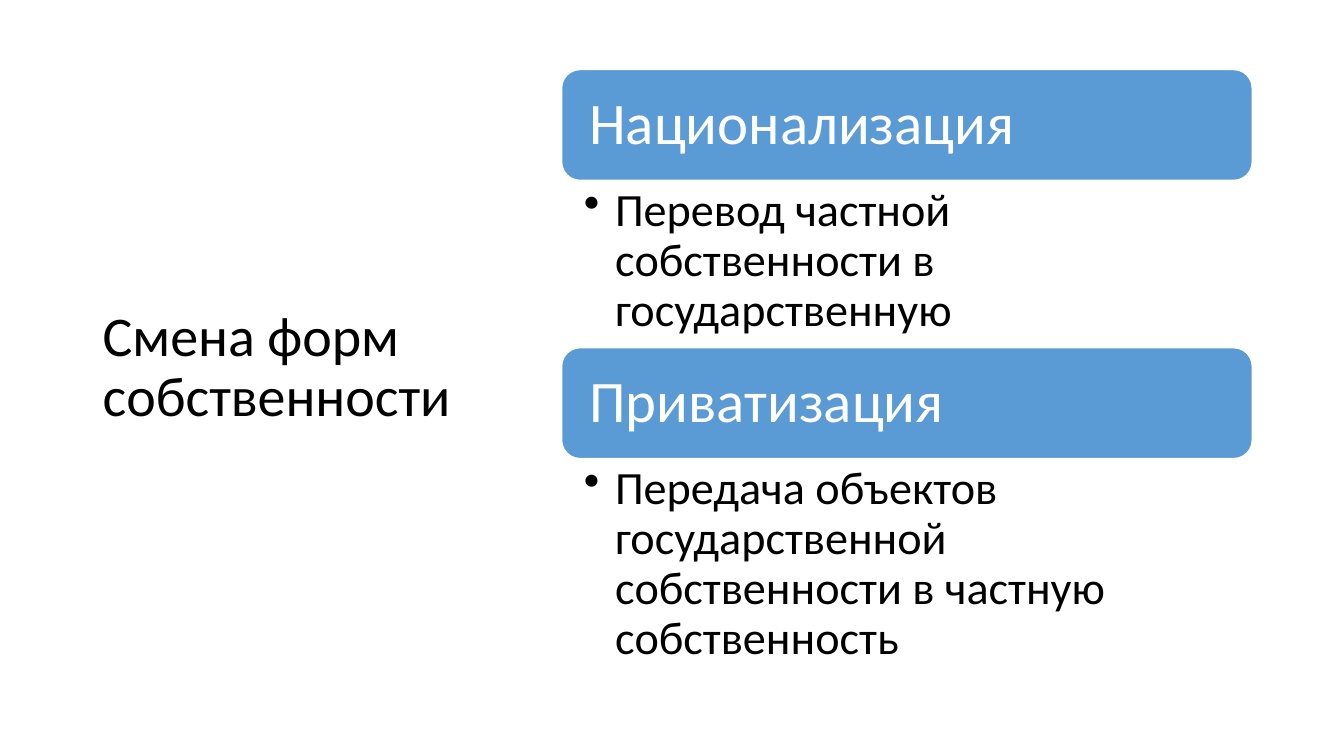
import pptx
import pptx.dml.color
import pptx.enum.shapes
import pptx.enum.text
import pptx.oxml
import pptx.oxml.ns
import pptx.util
from pptx.util import Inches

COLORS = {"bar": "5B9BD5", "light": "FFFFFF", "dark": "000000"}
MIDDLE = pptx.enum.text.MSO_ANCHOR.MIDDLE
TOP = pptx.enum.text.MSO_ANCHOR.TOP

BAR_HEIGHT = 1.1
# Heading, description, height of the description
FORMS = [
    ("Национализация", "Перевод частной собственности в государственную", 1.66),
    ("Приватизация",
     "Передача объектов государственной собственности в частную собственность", 2.14),
]


def color(name):
    return pptx.dml.color.RGBColor.from_string(COLORS[name])


def write(shape, text, size, color_name, anchor, insets):
    """Fill a shape with one left-aligned paragraph and return it."""
    frame = shape.text_frame
    frame.word_wrap = True
    frame.vertical_anchor = anchor
    (frame.margin_left, frame.margin_top,
     frame.margin_right, frame.margin_bottom) = map(Inches, insets)
    para = frame.paragraphs[0]
    para.alignment = pptx.enum.text.PP_ALIGN.LEFT
    para.line_spacing = 0.9
    span = para.add_run()
    span.text = text
    span.font.name = "Calibri"
    span.font.size = pptx.util.Pt(size)
    span.font.color.rgb = color(color_name)
    return para


def add_bullet(para, indent):
    props = para._p.get_or_add_pPr()
    props.set("marL", str(Inches(indent)))
    props.set("indent", str(-Inches(indent)))
    bullet = pptx.oxml.parse_xml(
        f'<a:buChar {pptx.oxml.ns.nsdecls("a")} char="•"/>')
    props.append(bullet)


def add_title(page, left, top, width, height):
    box = page.shapes.add_textbox(*map(Inches, (left, top, width, height)))
    write(box, "Смена форм собственности", 40, "dark", MIDDLE, (0.1, 0.05, 0.1, 0.05))


def add_form(page, left, top, width, heading, description, description_height):
    # Heading bar
    bar = page.shapes.add_shape(
        pptx.enum.shapes.MSO_SHAPE.ROUNDED_RECTANGLE,
        *map(Inches, (left, top, width, BAR_HEIGHT)))
    bar.shadow.inherit = False
    bar.fill.solid()
    bar.fill.fore_color.rgb = color("bar")
    bar.line.color.rgb = color("light")
    bar.line.width = pptx.util.Pt(1)
    write(bar, heading, 42, "light", MIDDLE, (0.22, 0.17, 0.22, 0.17))

    # Bulleted description below the bar
    box = page.shapes.add_textbox(
        *map(Inches, (left, top + BAR_HEIGHT, width, description_height)))
    para = write(box, description, 33, "dark", TOP, (0.22, 0.06, 0.33, 0.06))
    add_bullet(para, 0.31)


def add_forms(page, left, top, width):
    for heading, description, height in FORMS:
        add_form(page, left, top, width, heading, description, height)
        top += BAR_HEIGHT + height


def main():
    deck = pptx.Presentation()
    deck.slide_width, deck.slide_height = Inches(13.33), Inches(7.5)
    page = deck.slides.add_slide(deck.slide_layouts[6])
    add_title(page, 0.92, 0.61, 3.69, 6.09)
    add_forms(page, 5.57, 0.69, 6.85)
    deck.save("out.pptx")


if __name__ == "__main__":
    main()
